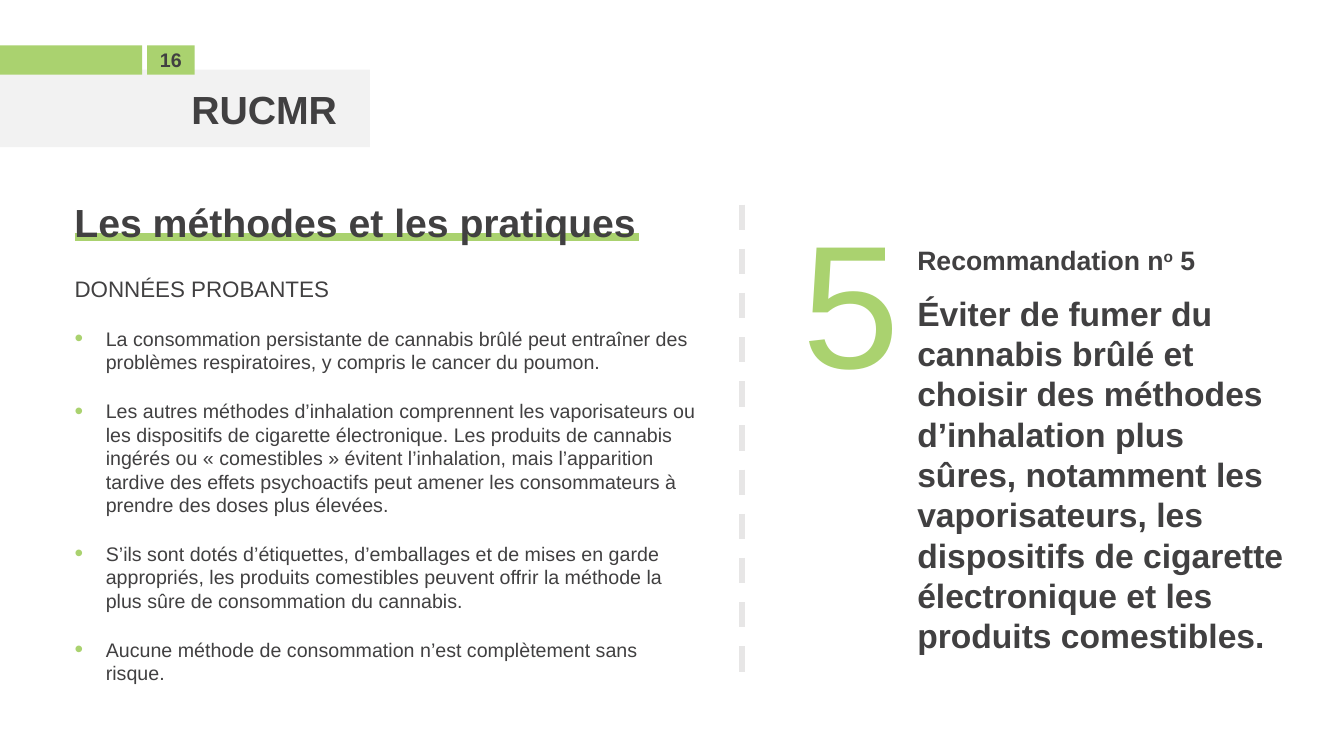
from lxml.etree import SubElement
from pptx import Presentation
from pptx.dml.color import RGBColor
from pptx.enum.dml import MSO_LINE
from pptx.enum.shapes import MSO_CONNECTOR, MSO_SHAPE
from pptx.enum.text import MSO_ANCHOR, PP_ALIGN
from pptx.oxml.ns import qn
from pptx.util import Inches, Pt

GREEN = RGBColor(0xAA, 0xD2, 0x6F)
DARK = RGBColor(0x41, 0x40, 0x41)
PALE = RGBColor(0xF2, 0xF2, 0xF2)
GREY = RGBColor(0xE7, 0xE6, 0xE6)
FONT = "Arial"

EVIDENCE = [
    "La consommation persistante de cannabis brûlé peut entraîner des problèmes "
    "respiratoires, y compris le cancer du poumon.",
    "Les autres méthodes d’inhalation comprennent les vaporisateurs ou les dispositifs "
    "de cigarette électronique. Les produits de cannabis ingérés ou « comestibles » "
    "évitent l’inhalation, mais l’apparition tardive des effets psychoactifs peut amener "
    "les consommateurs à prendre des doses plus élevées.",
    "S’ils sont dotés d’étiquettes, d’emballages et de mises en garde appropriés, les "
    "produits comestibles peuvent offrir la méthode la plus sûre de consommation du cannabis.",
    "Aucune méthode de consommation n’est complètement sans risque.",
]
ADVICE = (
    "Éviter de fumer du cannabis brûlé et choisir des méthodes d’inhalation plus sûres, "
    "notamment les vaporisateurs, les dispositifs de cigarette électronique et les "
    "produits comestibles."
)


def set_all(obj, values):
    for name, value in values.items():
        setattr(obj, name, value)


def add_rect(s, x, y, w, h, color):
    sp = s.shapes.add_shape(MSO_SHAPE.RECTANGLE, Inches(x), Inches(y), Inches(w), Inches(h))
    sp.shadow.inherit = False
    sp.fill.solid()
    sp.fill.fore_color.rgb = color
    sp.line.fill.background()


def add_line(s, x1, y1, x2, y2, color, width, dash=None):
    ln = s.shapes.add_connector(
        MSO_CONNECTOR.STRAIGHT, Inches(x1), Inches(y1), Inches(x2), Inches(y2))
    ln.line.color.rgb = color
    ln.line.width = Pt(width)
    if dash:
        ln.line.dash_style = dash
    SubElement(ln._element.spPr, qn("a:effectLst"))


def add_box(s, x, y, w, h, anchor=MSO_ANCHOR.TOP, inset=True):
    tf = s.shapes.add_textbox(Inches(x), Inches(y), Inches(w), Inches(h)).text_frame
    set_all(tf, {"word_wrap": True, "vertical_anchor": anchor})
    if not inset:
        set_all(tf, dict.fromkeys(
            ("margin_left", "margin_top", "margin_right", "margin_bottom"), 0))
    return tf


def add_run(p, text, size, bold=False, color=DARK):
    r = p.add_run()
    r.text = text
    set_all(r.font, {"name": FONT, "size": Pt(size), "bold": bold})
    r.font.color.rgb = color
    return r


def add_bullet(p):
    pPr = p._p.get_or_add_pPr()
    pPr.set("marL", str(Inches(0.31)))
    pPr.set("indent", str(-Inches(0.31)))
    clr = SubElement(pPr, qn("a:buClr"))
    SubElement(clr, qn("a:srgbClr"), val=str(GREEN))
    SubElement(pPr, qn("a:buSzPct"), val="125000")
    SubElement(pPr, qn("a:buFont"), typeface=FONT)
    SubElement(pPr, qn("a:buChar"), char="•")


def header(s, x, y):
    """Section tab with the page number above it."""
    add_rect(s, x, y + 0.24, 3.67, 0.77, PALE)
    p = add_box(s, x + 0.22, y + 0.34, 3.22, 0.57, MSO_ANCHOR.MIDDLE).paragraphs[0]
    p.alignment = PP_ALIGN.RIGHT
    add_run(p, "RUCMR", 28, True)
    add_rect(s, x, y, 1.41, 0.29, GREEN)
    add_rect(s, x + 1.46, y, 0.47, 0.29, GREEN)
    p = add_box(s, x + 1.46, y - 0.02, 0.47, 0.34).paragraphs[0]
    p.alignment = PP_ALIGN.CENTER
    add_run(p, "16", 14, True)


def evidence(s, x, y, w):
    """Underlined heading, subheading and bulleted findings."""
    add_line(s, x, y + 0.43, x + 5.6, y + 0.43, GREEN, 6)
    p = add_box(s, x - 0.1, y, w, 0.57).paragraphs[0]
    add_run(p, "Les méthodes et les pratiques", 28, True)
    p = add_box(s, x, y + 0.81, 5.49, 0.27, inset=False).paragraphs[0]
    add_run(p, "DONNÉES PROBANTES", 16)
    tf = add_box(s, x, y + 1.32, w, 3.69, inset=False)
    for i, text in enumerate(EVIDENCE):
        p = tf.add_paragraph() if i else tf.paragraphs[0]
        p.space_before = Pt(18)
        add_bullet(p)
        add_run(p, text, 14)


def recommendation(s, x, y, w, h):
    """Large numeral beside the recommendation text."""
    add_run(add_box(s, x, y, 1.55, 2.2).paragraphs[0], "5", 125, color=GREEN)
    tf = add_box(s, x + 1.14, y + 0.35, w - 1.14, h - 0.35, MSO_ANCHOR.MIDDLE)
    p = tf.paragraphs[0]
    p.line_spacing = 1.2
    add_run(p, "Recommandation n", 19, True)
    add_run(p, "o", 19, True).font._element.set("baseline", "30000")
    add_run(p, " 5", 19, True)
    p = tf.add_paragraph()
    p.space_before = Pt(12)
    add_run(p, ADVICE, 24, True)


def main():
    prs = Presentation()
    set_all(prs, {"slide_width": Inches(13.33), "slide_height": Inches(7.5)})
    s = prs.slides.add_slide(prs.slide_layouts[6])
    header(s, 0, 0.45)
    evidence(s, 0.74, 1.92, 6.2)
    add_line(s, 7.36, 2.03, 7.36, 6.67, GREY, 4.5, MSO_LINE.DASH)
    recommendation(s, 7.86, 1.87, 4.98, 4.77)
    prs.save("out.pptx")


if __name__ == "__main__":
    main()
